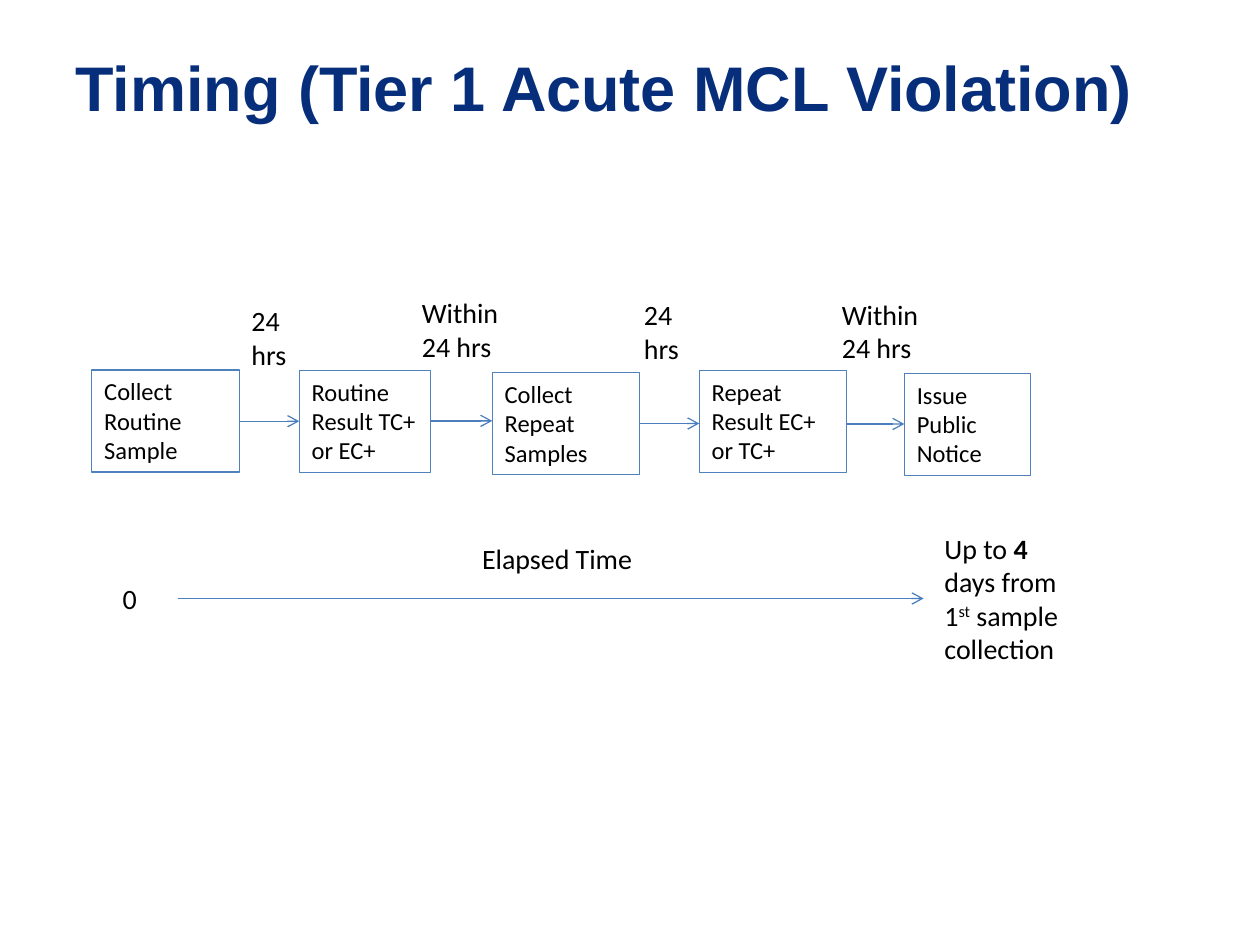
from lxml.etree import SubElement
from pptx import Presentation
from pptx.dml.color import RGBColor
from pptx.enum.shapes import MSO_CONNECTOR, MSO_SHAPE
from pptx.enum.text import MSO_ANCHOR, PP_ALIGN
from pptx.oxml.ns import qn
from pptx.util import Pt

NAVY = RGBColor(0x06, 0x2E, 0x7B)
BLACK = RGBColor(0, 0, 0)
BOX_BLUE = RGBColor(0x4F, 0x81, 0xBD)
ARROW_BLUE = RGBColor(0x4B, 0x7E, 0xBC)

TITLE = "Timing (Tier 1 Acute MCL Violation)"
STEP_H = 58.3
STEPS = [  # text, left, top, width
    ("Collect Routine Sample", 52.5, 211.5, 84.3),
    ("Routine Result TC+ or EC+", 171, 211.7, 75),
    ("Collect Repeat Samples", 281.3, 213, 84.3),
    ("Repeat Result EC+ or TC+", 399.6, 211.7, 84.3),
    ("Issue Public Notice", 516.8, 213.4, 72),
]
WAITS = [  # text, left, top, width of label, height of the arrow line below it
    ("24 hrs", 136.6, 170, 43.2, 240.7),
    ("Within 24 hrs", 234, 165.4, 58.3, 240.5),
    ("24 hrs", 360.9, 166.5, 43.2, 242),
    ("Within 24 hrs", 474, 166.2, 58.3, 242.3),
]
TIMELINE = (101.8, 527.8, 342)  # start, end, height on the slide
TIMELINE_LABELS = [  # runs of (text, style), left, top, width, height
    ([("0", "")], 63, 328.7, 27, 26.6),
    ([("Elapsed Time", "")], 268.4, 305.8, 113.8, 26.6),
    ([("Up to ", ""), ("4", "bold"), (" days from 1", ""), ("st", "super"),
      (" sample collection", "")], 532.6, 300, 90, 85),
]


def fill_text(shape, runs, size):
    tf = shape.text_frame
    tf.word_wrap = True
    tf.vertical_anchor = MSO_ANCHOR.TOP
    p = tf.paragraphs[0]
    p.alignment = PP_ALIGN.LEFT
    for text, style in runs:
        r = p.add_run()
        r.text = text
        r.font.name = "Calibri"
        r.font.size = Pt(size)
        r.font.color.rgb = BLACK
        if style == "bold":
            r.font.bold = True
        elif style == "super":
            r.font._element.set("baseline", "30000")


def add_label(s, runs, left, top, width, height):
    tb = s.shapes.add_textbox(Pt(left), Pt(top), Pt(width), Pt(height))
    fill_text(tb, runs, 16)


def add_step(s, text, left, top, width):
    box = s.shapes.add_shape(MSO_SHAPE.RECTANGLE, Pt(left), Pt(top), Pt(width), Pt(STEP_H))
    box.shadow.inherit = False
    box.fill.background()
    box.line.color.rgb = BOX_BLUE
    box.line.width = Pt(0.75)
    fill_text(box, [(text, "")], 14)


def add_arrow(s, x1, x2, y):
    arrow = s.shapes.add_connector(MSO_CONNECTOR.STRAIGHT, Pt(x1), Pt(y), Pt(x2), Pt(y))
    arrow.line.color.rgb = ARROW_BLUE
    arrow.line.width = Pt(0.75)
    SubElement(arrow.line._get_or_add_ln(), qn("a:tailEnd"), type="arrow")
    SubElement(arrow._element.spPr, qn("a:effectLst"))


def add_title(s):
    title = s.shapes.title
    title.left, title.top, title.width, title.height = Pt(36), Pt(24), Pt(648), Pt(90)
    tf = title.text_frame
    tf.text = TITLE
    tf.vertical_anchor = MSO_ANCHOR.TOP
    p = tf.paragraphs[0]
    p.alignment = PP_ALIGN.LEFT
    p.font.name = "Arial"
    p.font.size = Pt(36)
    p.font.bold = True
    p.font.color.rgb = NAVY


def main():
    prs = Presentation()
    prs.slide_width, prs.slide_height = Pt(720), Pt(540)
    s = prs.slides.add_slide(prs.slide_layouts[5])
    add_title(s)
    for step in STEPS:
        add_step(s, *step)
    for step, following, wait in zip(STEPS, STEPS[1:], WAITS):
        text, left, top, width, arrow_y = wait
        add_label(s, [(text, "")], left, top, width, 46)
        add_arrow(s, step[1] + step[3], following[1], arrow_y)
    add_arrow(s, *TIMELINE)
    for label in TIMELINE_LABELS:
        add_label(s, *label)
    prs.save("out.pptx")


if __name__ == "__main__":
    main()
